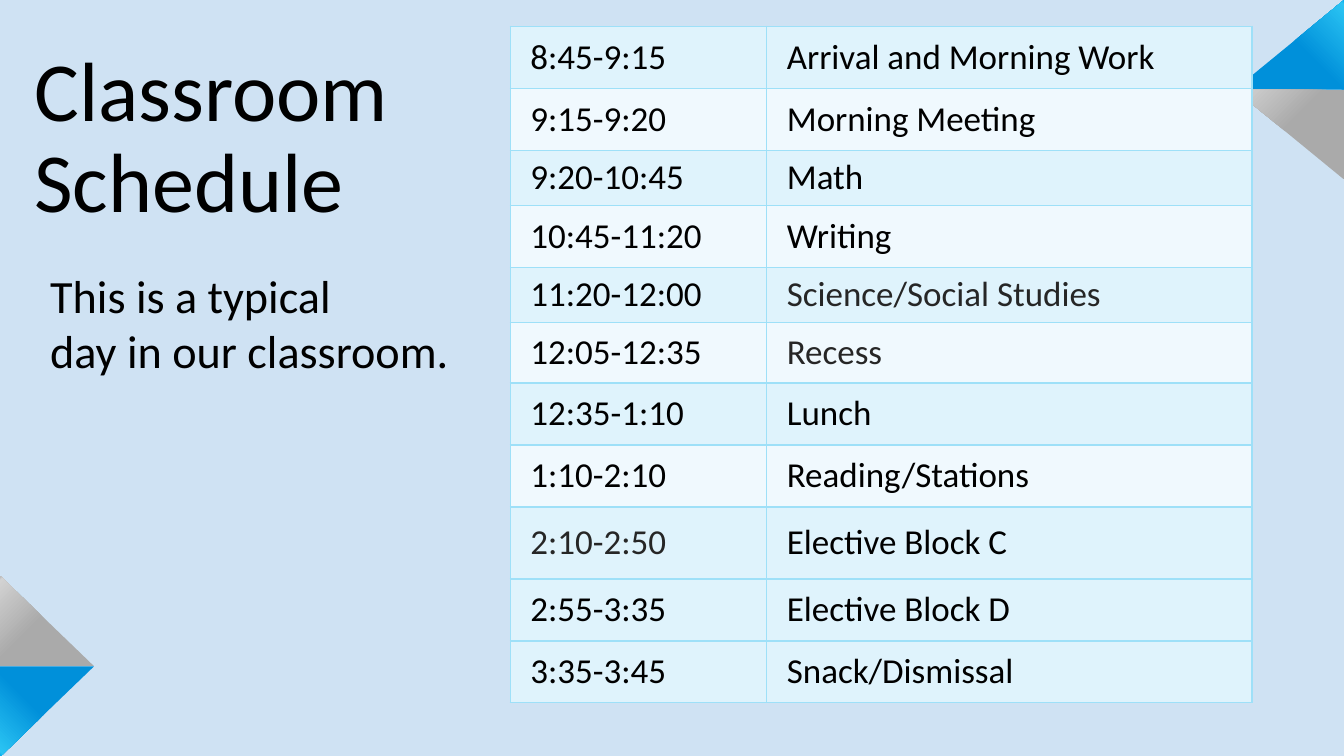
import pptx
import pptx.dml.color
import pptx.enum.text
import pptx.oxml
import pptx.oxml.ns
import pptx.util
from lxml import etree

Pt = pptx.util.Pt
RGBColor = pptx.dml.color.RGBColor
Anchor = pptx.enum.text.MSO_ANCHOR

WIDTH, HEIGHT = 960, 540
BACKGROUND = RGBColor(0xCF, 0xE2, 0xF3)
BLACK = RGBColor(0, 0, 0)
CHARCOAL = RGBColor(0x26, 0x26, 0x26)
BORDER = RGBColor(0x9E, 0xE0, 0xF8)
BAND_DARK = RGBColor(0xDF, 0xF3, 0xFC)
BAND_LIGHT = RGBColor(0xF0, 0xF9, 0xFE)
DEEP_BLUE = RGBColor(0x00, 0x90, 0xDA)
BRIGHT_BLUE = RGBColor(0x2B, 0xC4, 0xF3)
EDGE_BLUE = RGBColor(0x00, 0xAE, 0xEE)
DEEP_GRAY = RGBColor(0xAA, 0xAA, 0xAA)
BRIGHT_GRAY = RGBColor(0xD2, 0xD2, 0xD2)
EDGE_GRAY = RGBColor(0xB9, 0xB9, 0xB9)

BLUE_STOPS = [(0, DEEP_BLUE), (54, DEEP_BLUE), (98, BRIGHT_BLUE), (100, EDGE_BLUE)]
GRAY_STOPS = [(0, DEEP_GRAY), (54, DEEP_GRAY), (98, BRIGHT_GRAY), (100, EDGE_GRAY)]

# Outline, gradient stops, clockwise gradient angle
CORNERS = [
    ([(67.2, 475.9), (0, 475.9), (0, 540), (0.7, 540)], BLUE_STOPS, 135),
    ([(67.2, 475.9), (0.7, 411.8), (0, 411.8), (0, 475.9)], GRAY_STOPS, 225),
    ([(960, 0), (881.8, 64.1), (960, 64.1)], BLUE_STOPS, 315),
    ([(881.8, 64.1), (960, 128.2), (960, 64.1)], GRAY_STOPS, 225),
]

# Time, activity, row height
SCHEDULE = [
    ("8:45-9:15", "Arrival and Morning Work", 44.3),
    ("9:15-9:20", "Morning Meeting", 44.3),
    ("9:20-10:45", "Math", 39.4),
    ("10:45-11:20", "Writing", 44.3),
    ("11:20-12:00", "Science/Social Studies", 39.4),
    ("12:05-12:35", "Recess", 43.3),
    ("12:35-1:10", "Lunch", 44.3),
    ("1:10-2:10", "Reading/Stations", 44.3),
    ("2:10-2:50", "Elective Block C", 51.4),
    ("2:55-3:35", "Elective Block D", 44.3),
    ("3:35-3:45", "Snack/Dismissal", 44.3),
]
COLUMN_WIDTHS = [183.2, 346.6]
LIGHT_ROWS = {1, 3, 5, 7}
SOFT_TEXTS = {"Science/Social Studies", "Recess", "2:10-2:50"}


def write_text(frame, text, *, size, color=BLACK, font="Calibri", line_spacing=None):
    """Fill a text frame with one left-aligned paragraph per line of text."""
    for index, line in enumerate(text.split("\n")):
        paragraph = frame.paragraphs[0] if index == 0 else frame.add_paragraph()
        paragraph.alignment = pptx.enum.text.PP_ALIGN.LEFT
        if line_spacing:
            paragraph.line_spacing = line_spacing
        run = paragraph.add_run()
        run.text = line
        run.font.name = font
        run.font.size = Pt(size)
        run.font.color.rgb = color


class SlideBuilder:
    """Holds the current slide and the sizes shared by its elements."""

    title_size = 60
    body_size = 33
    table_size = 25
    border_width = 1

    def __init__(self, presentation):
        self.slide = presentation.slides.add_slide(presentation.slide_layouts[5])
        fill = self.slide.background.fill
        fill.solid()
        fill.fore_color.rgb = BACKGROUND

    def title(self, text, left, top, width, height):
        shape = self.slide.shapes.title
        shape.left, shape.top = Pt(left), Pt(top)
        shape.width, shape.height = Pt(width), Pt(height)
        frame = shape.text_frame
        frame.auto_size = pptx.enum.text.MSO_AUTO_SIZE.NONE
        frame.vertical_anchor = Anchor.BOTTOM
        write_text(frame, text, size=self.title_size, line_spacing=0.9)

    def body(self, text, left, top, width, height):
        shape = self.slide.shapes.add_textbox(Pt(left), Pt(top), Pt(width), Pt(height))
        shape.text_frame.word_wrap = True
        write_text(shape.text_frame, text, size=self.body_size)

    def gradient_polygon(self, points, stops, angle):
        start, *rest = [(Pt(x), Pt(y)) for x, y in points]
        builder = self.slide.shapes.build_freeform(*start)
        builder.add_line_segments(rest, close=True)
        shape = builder.convert_to_shape()
        shape.shadow.inherit = False
        shape.line.fill.background()
        shape.fill.gradient()
        shape.fill.gradient_angle = 360 - angle
        stop_list = shape.element.spPr.find(".//" + pptx.oxml.ns.qn("a:gsLst"))
        for stop in list(stop_list):
            stop_list.remove(stop)
        for position, color in stops:
            stop = etree.SubElement(
                stop_list, pptx.oxml.ns.qn("a:gs"), pos=str(position * 1000))
            etree.SubElement(stop, pptx.oxml.ns.qn("a:srgbClr"), val=str(color))

    def table(self, rows, column_widths, left, top):
        height = sum(row[-1] for row in rows)
        table = self.slide.shapes.add_table(
            len(rows), len(column_widths), Pt(left), Pt(top),
            Pt(sum(column_widths)), Pt(height)).table
        table.first_row = table.horz_banding = False
        for column, width in zip(table.columns, column_widths):
            column.width = Pt(width)
        for row_index, (*texts, row_height) in enumerate(rows):
            table.rows[row_index].height = Pt(row_height)
            band = BAND_LIGHT if row_index in LIGHT_ROWS else BAND_DARK
            for column_index, text in enumerate(texts):
                self.cell(table.cell(row_index, column_index), text, band)

    def cell(self, cell, text, band):
        cell.vertical_anchor = Anchor.MIDDLE
        cell.margin_left = Pt(14.4)
        cell.margin_right = cell.margin_top = cell.margin_bottom = Pt(4.3)
        properties = cell._tc.get_or_add_tcPr()
        for side in ("lnL", "lnR", "lnT", "lnB"):
            properties.append(pptx.oxml.parse_xml(
                f'<a:{side} {pptx.oxml.ns.nsdecls("a")} w="{Pt(self.border_width)}">'
                f'<a:solidFill><a:srgbClr val="{BORDER}"/></a:solidFill></a:{side}>'))
        cell.fill.solid()
        cell.fill.fore_color.rgb = band
        color = CHARCOAL if text in SOFT_TEXTS else BLACK
        write_text(cell.text_frame, text, size=self.table_size, color=color)


def main():
    presentation = pptx.Presentation()
    presentation.slide_width, presentation.slide_height = Pt(WIDTH), Pt(HEIGHT)
    builder = SlideBuilder(presentation)
    for points, stops, angle in CORNERS:
        builder.gradient_polygon(points, stops, angle)
    builder.title("Classroom Schedule", 17.3, 15.8, 332.6, 152.6)
    builder.table(SCHEDULE, COLUMN_WIDTHS, 364.5, 18.7)
    builder.body("This is a typical\nday in our classroom.", 28.8, 187.2, 310.3, 108)
    presentation.save("out.pptx")


if __name__ == "__main__":
    main()
